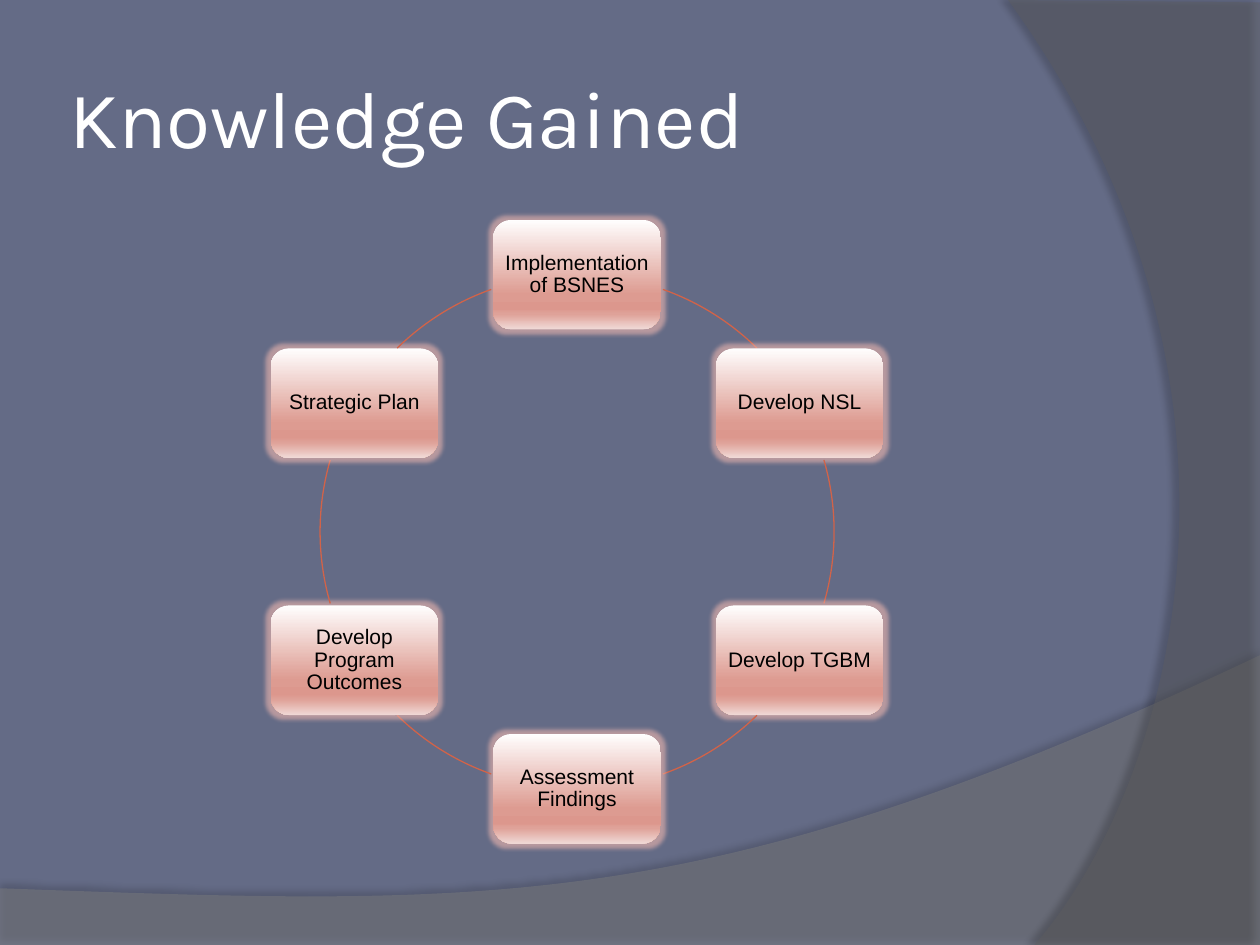
from math import cos, radians, sin, tan

from lxml.etree import SubElement
from pptx import Presentation
from pptx.dml.color import RGBColor
from pptx.enum.shapes import MSO_SHAPE as Shape
from pptx.enum.text import MSO_ANCHOR as Anchor, PP_ALIGN as Align
from pptx.oxml.ns import qn
from pptx.util import Inches, Pt

SLATE = RGBColor(0x64, 0x6B, 0x86)
GRAY = RGBColor(0x7F, 0x7F, 0x7F)
DARK_GRAY = RGBColor(0x5E, 0x5E, 0x5E)
WHITE = RGBColor(0xFF, 0xFF, 0xFF)
BLACK = RGBColor(0x00, 0x00, 0x00)
ORANGE = RGBColor(0xD1, 0x63, 0x49)
GLOW = RGBColor(0xF0, 0xB8, 0xB0)
NODE_STOPS = [
    (0, RGBColor(0xFF, 0xFE, 0xFE)),
    (68, RGBColor(0xDD, 0x9B, 0x91)),
    (81, RGBColor(0xDC, 0x97, 0x8D)),
    (86, RGBColor(0xDF, 0xA2, 0x99)),
    (100, RGBColor(0xF0, 0xD9, 0xD6)),
]
STEPS = [
    "Implementation of BSNES",
    "Develop NSL",
    "Develop TGBM",
    "Assessment Findings",
    "Develop Program Outcomes",
    "Strategic Plan",
]
ARCS = [(-70.5, -45.6), (-16.2, 16.2), (45.6, 70.5),
        (109.5, 134.4), (163.8, 196.2), (225.6, 250.5)]


def add_color(parent, color, opacity=100):
    node = SubElement(parent, qn("a:srgbClr"), val=str(color))
    if opacity < 100:
        SubElement(node, qn("a:alpha"), val=str(opacity * 1000))


def add_effect(shape, name, color, opacity, **settings):
    effects = shape.element.spPr.find(qn("a:effectLst"))
    effect = SubElement(effects, qn(name), **{key: str(value) for key, value in settings.items()})
    add_color(effect, color, opacity)


def add_outline(page, box, commands):
    left, top, width, height = [Inches(length) for length in box]
    builder = page.shapes.build_freeform(left, top)
    builder.add_line_segments([(left + width, top), (left + width, top + height)])
    shape = builder.convert_to_shape()
    shape.shadow.inherit = False
    outline = next(shape.element.spPr.iter(qn("a:path")))
    for segment in list(outline):
        outline.remove(segment)
    for name, *points in commands:
        segment = SubElement(outline, qn(name))
        for x, y in points:
            SubElement(segment, qn("a:pt"), x=str(Inches(x) - left), y=str(Inches(y) - top))
    return shape


def add_swoosh(page, box, commands, color, opacity, shadow_opacity, distance, angle):
    shape = add_outline(page, box, commands)
    shape.fill.solid()
    shape.fill.fore_color.rgb = color
    fill_color = shape.element.spPr.find(qn("a:solidFill")).find(qn("a:srgbClr"))
    SubElement(fill_color, qn("a:alpha"), val=str(opacity * 1000))
    shape.line.fill.background()
    add_effect(shape, "a:outerShdw", BLACK, shadow_opacity, blurRad=Pt(4),
               dist=Pt(distance), dir=angle * 60000, algn="ctr", rotWithShape=0)


def add_background(page):
    page.background.fill.solid()
    page.background.fill.fore_color.rgb = SLATE
    wave = [
        ("a:moveTo", (0, 7.05)),
        ("a:lnTo", (0, 7.51)),
        ("a:lnTo", (10, 7.51)),
        ("a:lnTo", (10, 5.2)),
        ("a:cubicBezTo", (5.59, 7.29), (3.91, 7.19), (0, 7.05)),
        ("a:close",),
    ]
    add_swoosh(page, (0, 5.2, 10, 2.31), wave, GRAY, 45, 35, 3.5, 270)
    curve = [
        ("a:moveTo", (10, 0.02)),
        ("a:lnTo", (10, 7.5)),
        ("a:lnTo", (8.21, 7.5)),
        ("a:cubicBezTo", (9.35, 6.19), (10.18, 3), (8, 0)),
        ("a:lnTo", (10, 0.02)),
        ("a:close",),
    ]
    add_swoosh(page, (8, 0, 2, 7.5), curve, DARK_GRAY, 40, 45, 4, 180)


def fill_text(shape, text, font, size, color, align):
    frame = shape.text_frame
    frame.word_wrap = True
    frame.vertical_anchor = Anchor.MIDDLE
    frame.margin_left = frame.margin_right = Inches(0.05)
    frame.margin_top = frame.margin_bottom = Inches(0.05)
    para = frame.paragraphs[0]
    para.alignment = align
    span = para.add_run()
    span.text = text
    span.font.name = font
    span.font.size = Pt(size)
    span.font.color.rgb = color
    return para


def add_title(page, left, top, width, height):
    box = page.shapes.add_textbox(Inches(left), Inches(top), Inches(width), Inches(height))
    fill_text(box, "Knowledge Gained", "Karla", 46, WHITE, Align.LEFT)


def add_node(page, text, left, top, width, height):
    node = page.shapes.add_shape(Shape.ROUNDED_RECTANGLE, Inches(left), Inches(top),
                                 Inches(width), Inches(height))
    node.shadow.inherit = False
    node.fill.gradient()
    node.fill.gradient_angle = 270
    stops = node.element.spPr.find(qn("a:gradFill")).find(qn("a:gsLst"))
    stops.clear()
    for position, color in NODE_STOPS:
        add_color(SubElement(stops, qn("a:gs"), pos=str(position * 1000)), color)
    node.line.fill.background()
    add_effect(node, "a:glow", GLOW, 60, rad=Pt(5))
    para = fill_text(node, text, "Arial", 12, BLACK, Align.CENTER)
    para.line_spacing = 0.9


def add_arc(page, left, top, diameter, start, end):
    radius = diameter / 2
    handle = 4 / 3 * tan(radians(end - start) / 4)

    def on_ring(angle, lean=0):
        turn = radians(angle)
        return (left + radius * (1 + cos(turn) - lean * sin(turn)),
                top + radius * (1 + sin(turn) + lean * cos(turn)))

    commands = [
        ("a:moveTo", on_ring(start)),
        ("a:cubicBezTo", on_ring(start, handle), on_ring(end, -handle), on_ring(end)),
    ]
    arc = add_outline(page, (left, top, diameter, diameter), commands)
    arc.fill.background()
    arc.line.color.rgb = ORANGE
    arc.line.width = Pt(0.75)


def add_cycle(page, left, top, diameter, node_width=1.33, node_height=0.87):
    radius = diameter / 2
    for index, (text, (start, end)) in enumerate(zip(STEPS, ARCS)):
        turn = radians(index * 60 - 90)
        x = left + radius * (1 + cos(turn))
        y = top + radius * (1 + sin(turn))
        add_node(page, text, x - node_width / 2, y - node_height / 2, node_width, node_height)
        add_arc(page, left, top, diameter, start, end)


def main():
    deck = Presentation()
    deck.slide_width, deck.slide_height = Inches(10), Inches(7.5)
    page = deck.slides.add_slide(deck.slide_layouts[6])
    add_background(page)
    add_title(page, 0.5, 0.3, 8.17, 1.25)
    add_cycle(page, 2.54, 2.18, 4.08)
    deck.save("out.pptx")


if __name__ == "__main__":
    main()
